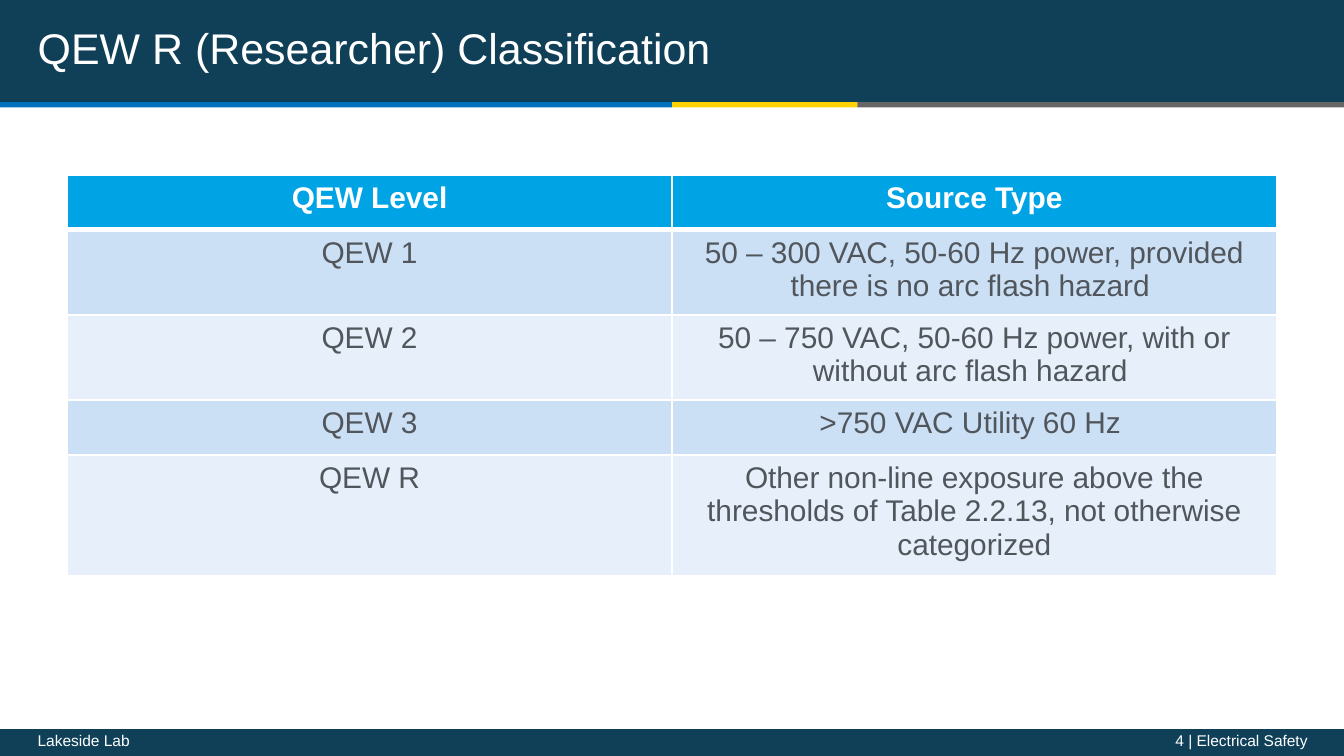
from typing import NamedTuple

from lxml.etree import SubElement
from pptx import Presentation
from pptx.dml.color import RGBColor
from pptx.enum.shapes import MSO_SHAPE
from pptx.enum.text import MSO_ANCHOR, PP_ALIGN
from pptx.oxml.ns import qn
from pptx.util import Inches, Pt

WIDTH = 10
HEIGHT = WIDTH * 9 / 16
FONT = "Arial"
COLORS = {
    "navy": "0F4058", "blue": "0071BC", "yellow": "FFD200", "gray": "666666",
    "header": "00A4E4", "band_dark": "CCE0F5", "band_light": "E7F0FA",
    "text": "50565C", "white": "FFFFFF",
}
STRIPES = [("blue", 5), ("yellow", 1.38), ("gray", 3.62)]  # tenths of width
ROW_HEIGHT = 0.41
ROWS = [
    ("QEW Level", "Source Type"),
    ("QEW 1", "50 – 300 VAC, 50-60 Hz power, provided there is no arc flash hazard "),
    ("QEW 2", "50 – 750 VAC, 50-60 Hz power, with or without arc flash hazard "),
    ("QEW 3", ">750 VAC Utility 60 Hz "),
    ("QEW R", "Other non-line exposure above the thresholds of Table 2.2.13, "
              "not otherwise categorized"),
]


class Box(NamedTuple):
    left: float
    top: float
    width: float
    height: float

    def lengths(self):
        return [Inches(value) for value in self]


def color(name):
    return RGBColor.from_string(COLORS[name])


def write(frame, text, *, size, fill="white", bold=False,
          align=PP_ALIGN.LEFT, spacing=None):
    para = frame.paragraphs[0]
    para.alignment = align
    if spacing is not None:
        para.line_spacing = spacing
    span = para.add_run()
    span.text = text
    span.font.name, span.font.size, span.font.bold = FONT, Pt(size), bold
    span.font.color.rgb = color(fill)
    # The paragraph mark takes the text size, so rows grow no more than needed
    SubElement(para._p, qn("a:endParaRPr"), sz=str(round(size * 100)))


def set_frame(frame):
    frame.word_wrap = True
    frame.vertical_anchor = MSO_ANCHOR.MIDDLE
    frame.margin_left = frame.margin_right = Inches(0.09)
    frame.margin_top = frame.margin_bottom = Inches(0.04)


def add_band(page, box, fill):
    band = page.shapes.add_shape(MSO_SHAPE.RECTANGLE, *box.lengths())
    band.shadow.inherit = False
    band.fill.solid()
    band.fill.fore_color.rgb = color(fill)
    band.line.fill.background()


def add_header(page, box, title_text):
    add_band(page, box, "navy")
    # Three-colour stripe below the header
    left = box.left
    for fill, tenths in STRIPES:
        width = tenths * box.width / 10
        add_band(page, Box(left, box.top + box.height, width, 0.04), fill)
        left += width
    # Title, brought in front of the band
    title = page.shapes.title
    title.left, title.top, title.width, title.height = Box(
        box.left + 0.19, box.top, box.width - 1.65, box.height - 0.02).lengths()
    title.element.getparent().append(title.element)
    set_frame(title.text_frame)
    write(title.text_frame, title_text, size=23, spacing=Pt(25))


def add_footer(page, box, left_text, right_text):
    add_band(page, box, "navy")
    right_edge = box.left + box.width - 0.15
    for text, left, width, align in (
            (left_text, box.left + 0.19, 1.49, PP_ALIGN.LEFT),
            (right_text, right_edge - 1.25, 1.25, PP_ALIGN.RIGHT)):
        label = page.shapes.add_textbox(
            *Box(left, box.top, width, box.height).lengths())
        set_frame(label.text_frame)
        write(label.text_frame, text, size=8.3, align=align, spacing=0.8)


def add_borders(cell, bottom):
    properties = cell._tc.get_or_add_tcPr()
    sides = (("a:lnL", 1), ("a:lnR", 1), ("a:lnT", 1), ("a:lnB", bottom))
    for place, (side, points) in enumerate(sides):
        line = SubElement(properties, qn(side), w=str(Pt(points)))
        fill = SubElement(line, qn("a:solidFill"))
        SubElement(fill, qn("a:srgbClr"), val=COLORS["white"])
        properties.insert(place, line)  # borders come before the cell fill


def add_level_table(page, box, rows):
    holder = page.shapes.add_table(len(rows), len(rows[0]), *box.lengths())
    table = holder.table
    for row in table.rows:
        row.height = Inches(ROW_HEIGHT)  # rows grow with their text
    holder.height = Inches(box.height)
    for row_number, texts in enumerate(rows):
        is_header = row_number == 0
        band = "band_dark" if row_number % 2 else "band_light"
        for column, text in enumerate(texts):
            cell = table.cell(row_number, column)
            cell.fill.solid()
            cell.fill.fore_color.rgb = color("header" if is_header else band)
            # A thick rule separates header and body
            add_borders(cell, bottom=3 if is_header else 1)
            write(cell.text_frame, text, size=16, bold=is_header,
                  fill="white" if is_header else "text", align=PP_ALIGN.CENTER)


def main():
    deck = Presentation()
    deck.slide_width, deck.slide_height = Inches(WIDTH), Inches(HEIGHT)
    page = deck.slides.add_slide(deck.slide_layouts.get_by_name("Title Only"))
    add_header(page, Box(0, 0, WIDTH, 0.76), "QEW R (Researcher) Classification")
    add_footer(page, Box(0, HEIGHT - 0.2, WIDTH, 0.2),
               "Lakeside Lab", "4 | Electrical Safety ")
    add_level_table(page, Box(0.05 * WIDTH, 1.3, 0.9 * WIDTH, 2.98), ROWS)
    deck.save("out.pptx")


if __name__ == "__main__":
    main()
